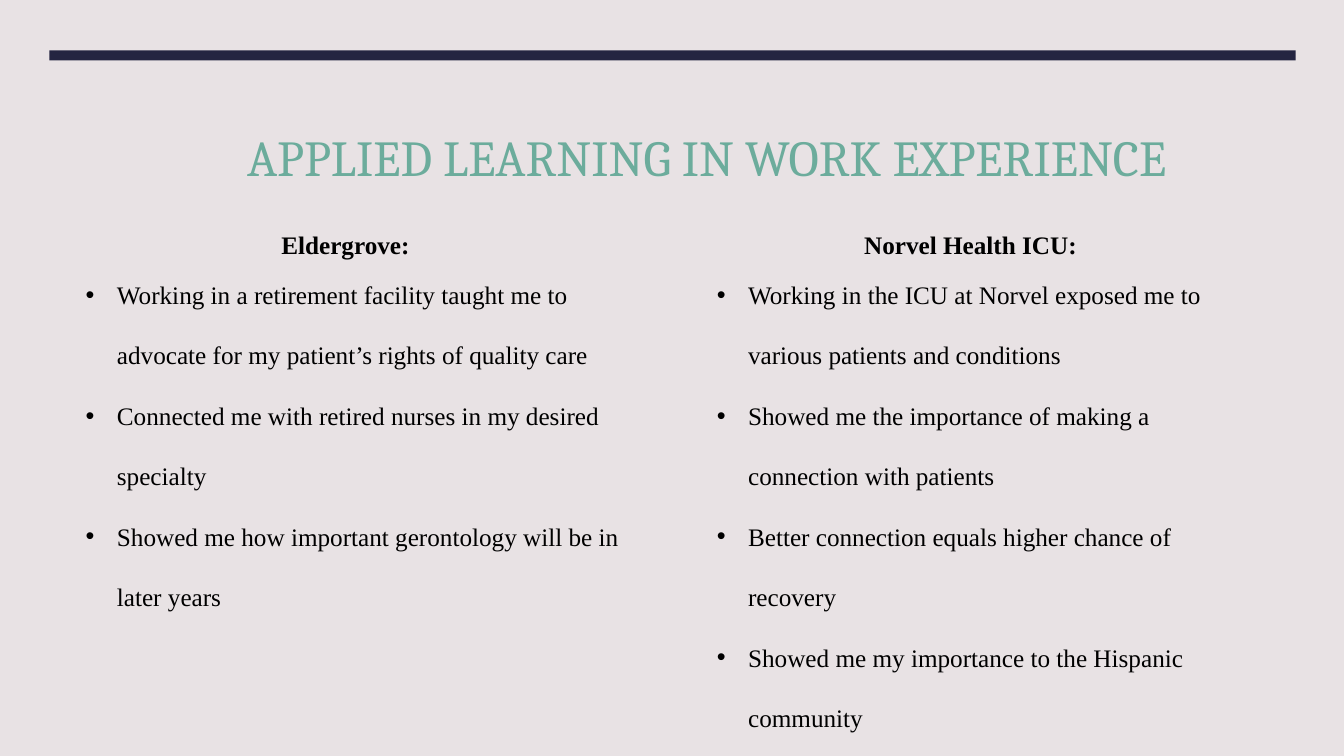
from pptx import Presentation
from pptx.dml.color import RGBColor
from pptx.enum.shapes import MSO_SHAPE as SHAPE
from pptx.enum.text import MSO_ANCHOR as ANCHOR, MSO_AUTO_SIZE as AUTOSIZE, PP_ALIGN as ALIGN
from pptx.util import Inches, Pt
from lxml.etree import SubElement
from pptx.oxml.ns import qn


def paint(fill, color):
    fill.solid()
    fill.fore_color.rgb = RGBColor.from_string(color)


def write(sp, lines, box, size=18, font="Times New Roman", color="000000", bold=False,
          align=ALIGN.LEFT, anchor=ANCHOR.TOP, spacing=1, bullet=False):
    sp.left, sp.top, sp.width, sp.height = [Inches(v) for v in box]
    tf = sp.text_frame
    tf.text = "\n".join(lines)
    tf.word_wrap = True
    tf.auto_size = AUTOSIZE.NONE
    tf.vertical_anchor = anchor
    for p in tf.paragraphs:
        p.alignment = align
        p.line_spacing = spacing
        p.space_before = p.space_after = Pt(0)
        if bullet:
            pPr = p._p.get_or_add_pPr()
            pPr.set("marL", str(Inches(0.31)))
            pPr.set("indent", str(-Inches(0.31)))
            SubElement(pPr, qn("a:buFont"), typeface="Arial")
            SubElement(pPr, qn("a:buChar"), char="•")
        for r in p.runs:
            r.font.name = font
            r.font.size = Pt(size)
            r.font.bold = bold
            paint(r.font.fill, color)


prs = Presentation()
prs.slide_width, prs.slide_height = Inches(13.33), Inches(7.5)
s = prs.slides.add_slide(prs.slide_layouts[4])
paint(s.background.fill, "E8E2E4")

panels = [((0, 0, 13.33, 7.5), "E8E2E4", 2), ((0.49, 0.5, 12.36, 0.1), "242541", 4)]
for box, color, layer in panels:
    sp = s.shapes.add_shape(SHAPE.RECTANGLE, *[Inches(v) for v in box])
    sp.shadow.inherit = False
    paint(sp.fill, color)
    sp.line.fill.background()
    s.shapes._spTree.insert(layer, sp._element)

write(s.shapes.title, ["APPLIED LEARNING IN WORK EXPERIENCE"], (1.17, 0.6, 11.68, 1.3),
      size=36, font="Cambria", color="6CAC9C", align=ALIGN.CENTER, anchor=ANCHOR.BOTTOM)

columns = [
    ("Eldergrove:", (2.69, 2.22, 1.54, 0.4), (0.75, 2.42, 5.67, 3.64), [
        "Working in a retirement facility taught me to advocate for my patient’s rights of quality care",
        "Connected me with retired nurses in my desired specialty",
        "Showed me how important gerontology will be in later years",
    ]),
    ("Norvel Health ICU:", (8.47, 2.22, 2.52, 0.4), (7.01, 2.42, 5.44, 4.86), [
        "Working in the ICU at Norvel exposed me to various patients and conditions",
        "Showed me the importance of making a connection with patients",
        "Better connection equals higher chance of recovery",
        "Showed me my importance to the Hispanic community",
    ]),
]
for i, (heading, heading_box, list_box, points) in enumerate(columns):
    write(s.placeholders[2 * i + 1], [heading], heading_box, bold=True)
    write(s.placeholders[2 * i + 2], points, list_box, spacing=2, bullet=True)

prs.save("out.pptx")
